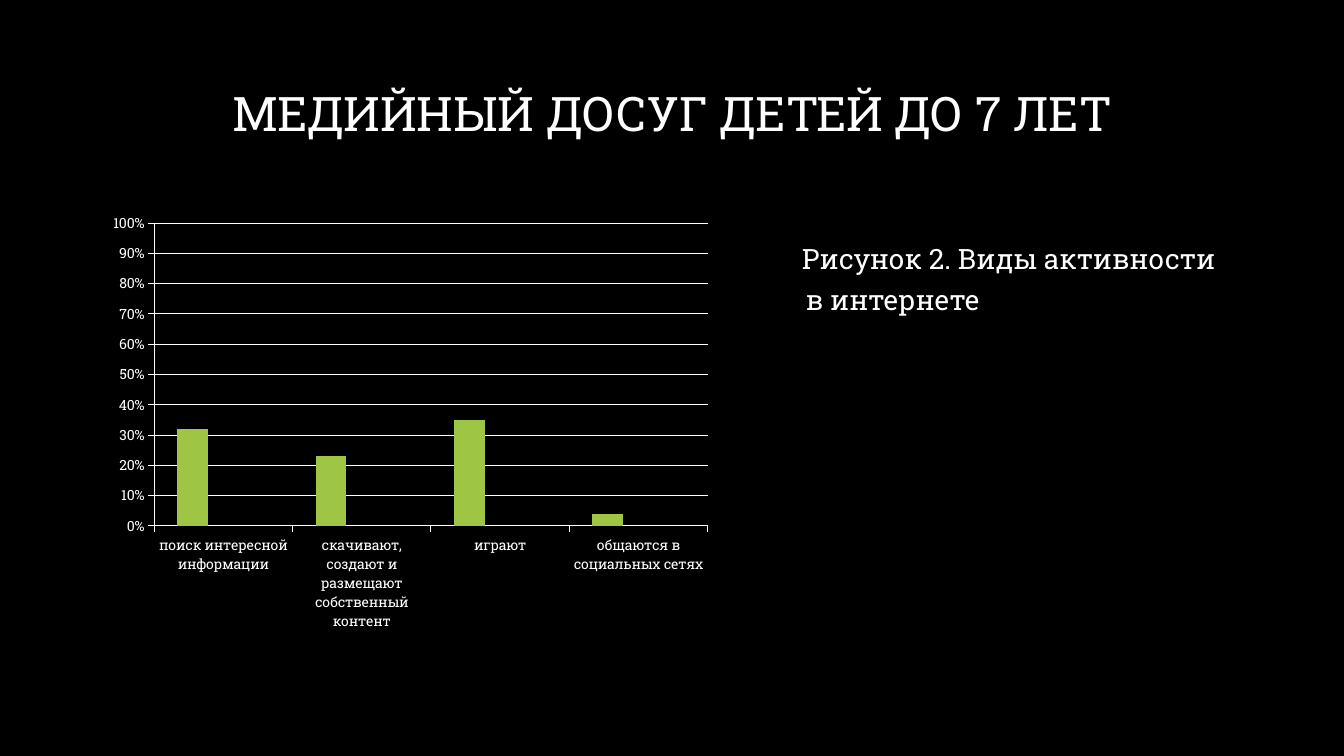
import pptx
import pptx.chart.data
import pptx.dml.color
import pptx.enum.chart
import pptx.enum.text
import pptx.util

PX = 12192000 / 1344
FONT = "Roboto Slab"
WHITE = "FFFFFF"


def px(*lengths):
    """Turn pixel lengths into EMU."""
    return [pptx.util.Emu(round(length * PX)) for length in lengths]


def paint(color_format, hex_color):
    color_format.rgb = pptx.dml.color.RGBColor.from_string(hex_color)


deck = pptx.Presentation()
deck.slide_width, deck.slide_height = px(1344, 756)
slide = deck.slides.add_slide(deck.slide_layouts[5])
slide.background.fill.solid()
paint(slide.background.fill.fore_color, "000000")

# Heading and caption
title = slide.shapes.title
title.left, title.top, title.width, title.height = px(101, 68, 1141, 97)
caption = slide.shapes.add_textbox(*px(771, 230, 471, 408))

for block, text, size, spacing, align, anchor in [
    (title, "МЕДИЙНЫЙ ДОСУГ ДЕТЕЙ ДО 7 ЛЕТ", 34, 0.9,
     pptx.enum.text.PP_ALIGN.CENTER, pptx.enum.text.MSO_ANCHOR.MIDDLE),
    (caption, "Рисунок 2. Виды активности в интернете", 20, 1.2,
     pptx.enum.text.PP_ALIGN.LEFT, pptx.enum.text.MSO_ANCHOR.TOP),
]:
    frame = block.text_frame
    frame.word_wrap = True
    frame.auto_size = pptx.enum.text.MSO_AUTO_SIZE.NONE
    frame.vertical_anchor = anchor
    frame.text = text
    paragraph = frame.paragraphs[0]
    paragraph.alignment = align
    paragraph.line_spacing = spacing
    paragraph.font.name = FONT
    paragraph.font.size = pptx.util.Pt(size)
    paint(paragraph.font.color, WHITE)

caption_paragraph = caption.text_frame.paragraphs[0]
caption_paragraph.space_before = pptx.util.Pt(10)
left_margin, first_line_indent = px(25, -4)
caption_properties = caption_paragraph._p.get_or_add_pPr()
caption_properties.set("marL", str(left_margin))
caption_properties.set("indent", str(first_line_indent))

# Online activities
activities = pptx.chart.data.CategoryChartData(number_format="0%")
activities.categories = [
    "поиск интересной информации",
    "скачивают, создают и размещают собственный контент",
    "играют",
    "общаются в социальных сетях",
]
activities.add_series("Series 1", [0.32, 0.23, 0.35, 0.04])
activities.add_series("Series 2", [None] * 4)
activities.add_series("Series 3", [None] * 4)

chart = slide.shapes.add_chart(
    pptx.enum.chart.XL_CHART_TYPE.COLUMN_CLUSTERED,
    *px(101, 205, 619, 434), activities).chart
chart.has_legend = False
chart.has_title = False
chart.font.name = FONT
chart.font.size = pptx.util.Pt(10)
paint(chart.font.color, WHITE)

columns = chart.plots[0]
columns.vary_by_categories = False
columns.gap_width = 150
columns.overlap = 0
for series, color in zip(columns.series, ["9EC544", "50BEA3", "4A9CCC"]):
    series.format.fill.solid()
    paint(series.format.fill.fore_color, color)

shares = chart.value_axis
shares.minimum_scale = 0
shares.maximum_scale = 1
shares.major_unit = 0.1
shares.has_major_gridlines = True
shares.tick_labels.number_format = "0%"
shares.tick_labels.number_format_is_linked = False
for axis in (shares, chart.category_axis):
    axis.major_tick_mark = pptx.enum.chart.XL_TICK_MARK.OUTSIDE
    axis.minor_tick_mark = pptx.enum.chart.XL_TICK_MARK.NONE

for line in (shares.format.line, chart.category_axis.format.line,
             shares.major_gridlines.format.line):
    line.width = pptx.util.Pt(0.75)
    line.fill.solid()
    paint(line.fill.fore_color, WHITE)

deck.save("out.pptx")
